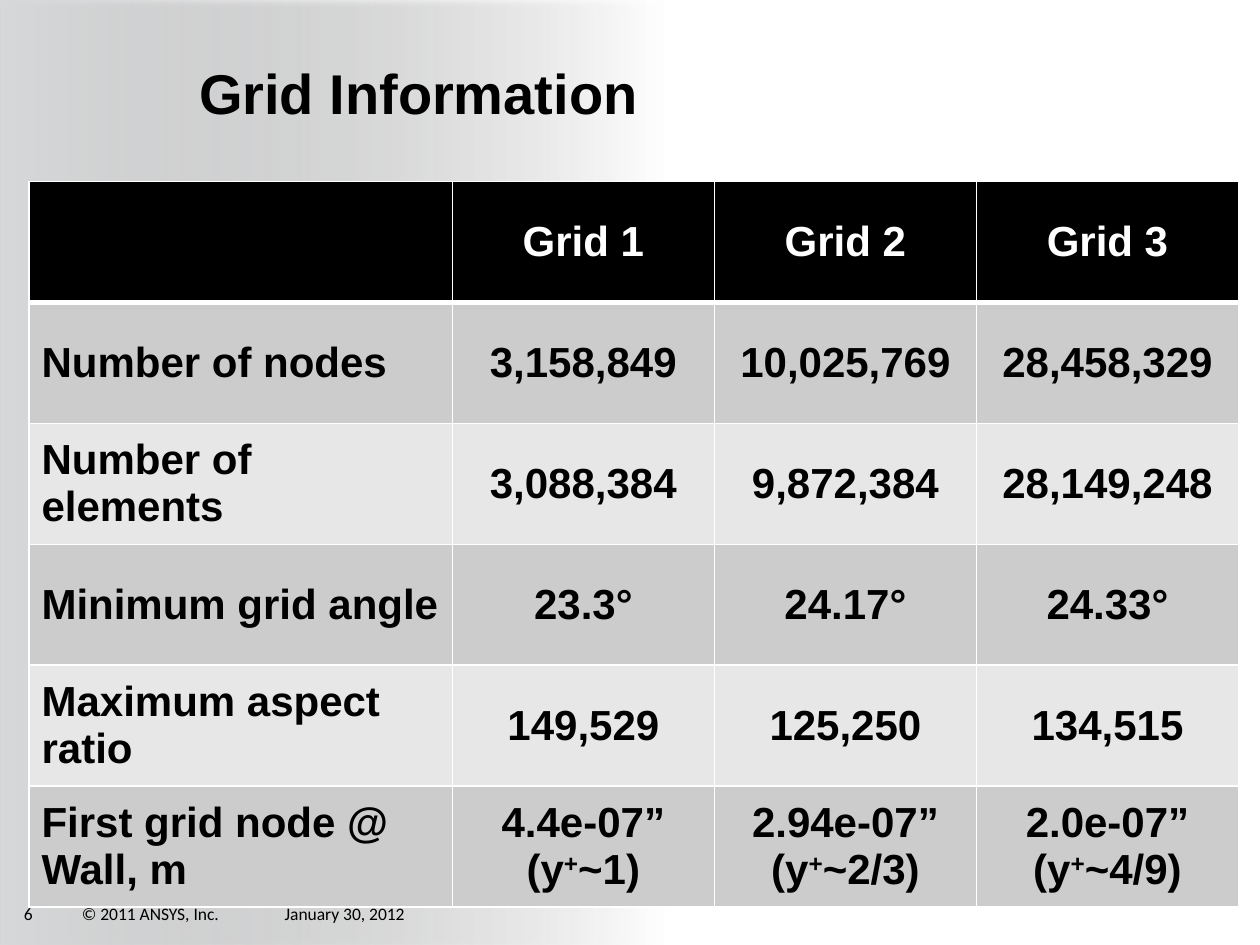
from lxml.etree import SubElement
from pptx import Presentation
from pptx.dml.color import RGBColor
from pptx.enum.shapes import MSO_SHAPE
from pptx.enum.text import MSO_ANCHOR, PP_ALIGN
from pptx.oxml.ns import qn
from pptx.util import Inches, Pt

ROWS = [
    ["", "Grid 1", "Grid 2", "Grid 3"],
    ["Number of nodes", "3,158,849", "10,025,769", "28,458,329"],
    ["Number of elements", "3,088,384", "9,872,384", "28,149,248"],
    ["Minimum grid angle", "23.3°", "24.17°", "24.33°"],
    ["Maximum aspect ratio", "149,529", "125,250", "134,515"],
    ["First grid node @ Wall, m", "4.4e-07”\n(y^+^~1)",
     "2.94e-07”\n(y^+^~2/3)", "2.0e-07”\n(y^+^~4/9)"],
]
FOOT = [(0.19, 0.31, "6"), (0.65, 1.62, "© 2011 ANSYS, Inc."),
        (2.26, 1.1, "January 30, 2012")]


def tint(code):
    """Turn a hex string into a colour."""
    return RGBColor.from_string(code)


class Deck:
    """Holds the style and the current slide."""

    ink, white, haze = "000000", "FFFFFF", "D7D8D9"
    bands = ["E7E7E7", "CCCCCC"]
    head, small = "Arial", "Calibri"

    def __init__(self):
        """Open a deck with one blank slide."""
        self.prs = Presentation()
        self.prs.slide_width, self.prs.slide_height = Inches(10), Inches(7.5)
        self.slide = self.prs.slides.add_slide(self.prs.slide_layouts[6])

    def place(self, left, top, width, height):
        """Turn columns and rows of a 10 by 7.5 grid into lengths."""
        col, row = self.prs.slide_width / 10, self.prs.slide_height / 7.5
        return [round(n) for n in
                (left * col, top * row, width * col, height * row)]

    def fade(self, end):
        """Cover the slide with a haze that clears towards the right."""
        box = self.slide.shapes.add_shape(
            MSO_SHAPE.RECTANGLE, *self.place(0, 0, 10, 7.5))
        box.line.fill.background()
        box.fill.gradient()
        box.fill.gradient_angle = 0
        for stop, spot in zip(box.fill.gradient_stops, (0, end)):
            stop.color.rgb = tint(self.haze)
            stop.position = spot
        box.shadow.inherit = False
        props = box._element.spPr
        last = list(props.iter(qn("a:srgbClr")))[-1]
        SubElement(last, qn("a:alpha"), val="0")
        cast = SubElement(
            props.find(qn("a:effectLst")), qn("a:outerShdw"),
            blurRad=str(Pt(3.1)), dist=str(Pt(1.8)), dir="5400000",
            rotWithShape="0")
        shade = SubElement(cast, qn("a:srgbClr"), val=self.ink)
        SubElement(shade, qn("a:alpha"), val="35000")

    def fill(self, frame, words, size, face, color, bold=False, align=None):
        """Fill a frame; carets enclose raised text."""
        for num, line in enumerate(words.split("\n")):
            para = frame.add_paragraph() if num else frame.paragraphs[0]
            para.alignment = align
            font = para.font
            font.size, font.name, font.bold = Pt(size), face, bold
            font.color.rgb = tint(color)
            for odd, part in enumerate(line.split("^")):
                run = para.add_run()
                run.text = part
                if odd % 2:
                    run._r.get_or_add_rPr().set("baseline", "30000")

    def label(self, spot, words, size, face, bold=False,
              anchor=MSO_ANCHOR.TOP, space=None):
        """Add a text box without margins."""
        frame = self.slide.shapes.add_textbox(*self.place(*spot)).text_frame
        frame.word_wrap = True
        frame.vertical_anchor = anchor
        frame.margin_left = frame.margin_right = 0
        frame.margin_top = frame.margin_bottom = 0
        self.fill(frame, words, size, face, self.ink, bold)
        frame.paragraphs[0].line_spacing = space

    def edge(self, cell, **sides):
        """Draw the white borders of a cell, widths in points."""
        props = cell._tc.get_or_add_tcPr()
        for side in "LRTB":
            line = SubElement(props, qn(f"a:ln{side}"),
                              w=str(Pt(sides.get(side, 1))))
            paint = SubElement(line, qn("a:solidFill"))
            SubElement(paint, qn("a:srgbClr"), val=self.white)

    def table(self, spot, rows, first):
        """Add a banded table; first is the share of the lead column."""
        place = self.place(*spot)
        count = len(rows[0])
        grid = self.slide.shapes.add_table(len(rows), count, *place).table
        lead = round(place[2] * first)
        for num, col in enumerate(grid.columns):
            col.width = (place[2] - lead) // (count - 1) if num else lead
        for r, row in enumerate(rows):
            for c, words in enumerate(row):
                cell = grid.cell(r, c)
                self.edge(cell, B=1 if r else 3, T=3 if r == 1 else 1)
                cell.fill.solid()
                cell.fill.fore_color.rgb = tint(
                    self.bands[r % 2] if r else self.ink)
                cell.vertical_anchor = MSO_ANCHOR.MIDDLE
                if words:
                    self.fill(cell.text_frame, words, 24, self.head,
                              self.ink if r else self.white, True,
                              PP_ALIGN.CENTER if c else PP_ALIGN.LEFT)


def main():
    """Build the slide."""
    deck = Deck()
    deck.fade(0.53)
    for left, width, words in FOOT:
        deck.label((left, 7.17, width, 0.17), words, 10, deck.small)
    deck.label((1.58, 0.5, 7.79, 0.53), "Grid Information", 32, deck.head,
               True, MSO_ANCHOR.MIDDLE, 0.9)
    deck.table((0.23, 1.44, 9.6, 5.76), ROWS, 0.35)
    deck.prs.save("out.pptx")


if __name__ == "__main__":
    main()
